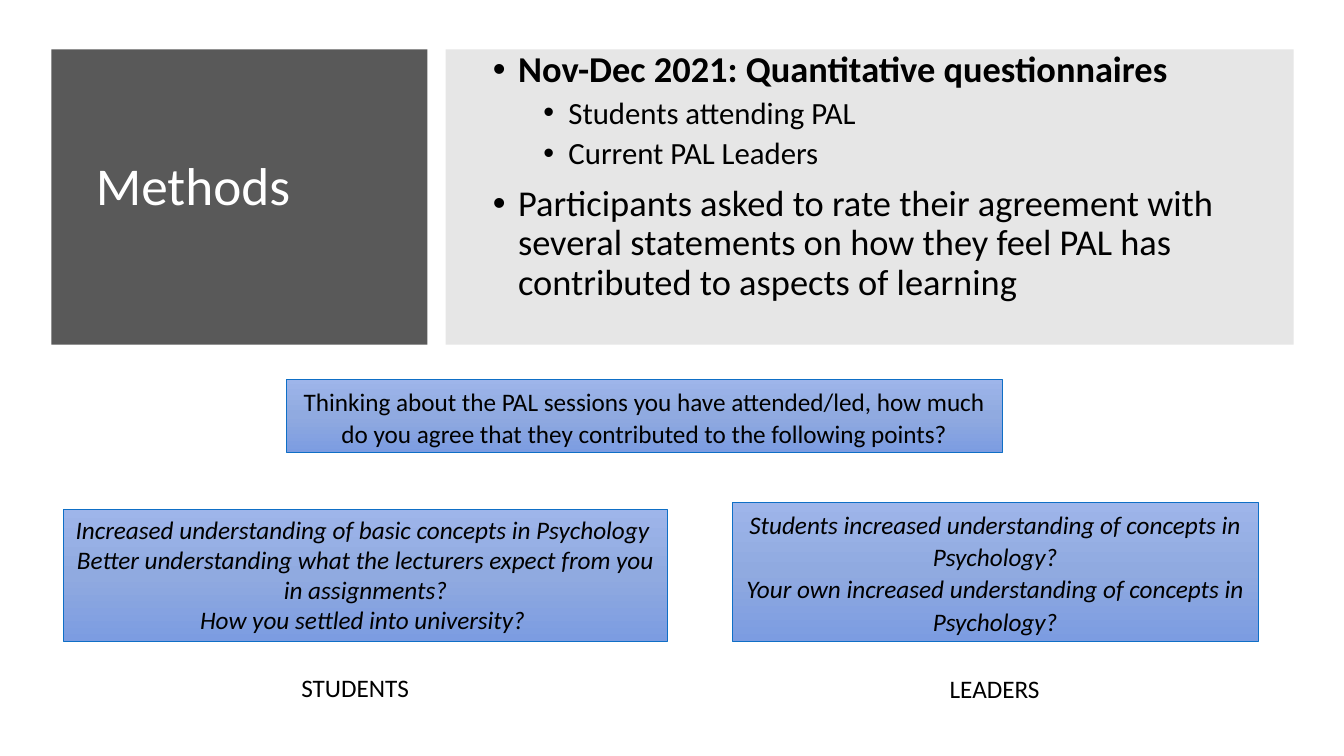
from dataclasses import dataclass
from pptx import Presentation, oxml, util as u
from pptx.dml.color import RGBColor
from pptx.enum import shapes, text
from pptx.oxml import ns


@dataclass(frozen=True)
class Theme:
    font: str = "Calibri"
    dark: str = "595959"
    pale: str = "E6E6E6"
    ink: str = "000000"
    white: str = "FFFFFF"
    edge: str = "0F6FC6"
    blend: tuple = ((0, "9EB5EA"), (50, "90AAE0"), (100, "7C9CE1"))
    head: int = 38
    main: int = 26
    sub: int = 22
    note: int = 18


class Deck:
    def __init__(self, theme):
        self.theme = theme
        self.prs = Presentation()
        self.prs.slide_width = u.Inches(13.33)
        self.prs.slide_height = u.Inches(7.5)
        self.slide = self.prs.slides.add_slide(self.prs.slide_layouts[5])

    def rect(self, *box):
        shape = self.slide.shapes.add_shape(
            shapes.MSO_SHAPE.RECTANGLE, *map(u.Inches, box))
        shape.shadow.inherit = False
        return shape

    def panel(self, box, color):
        shape = self.rect(*box)
        shape.fill.solid()
        shape.fill.fore_color.rgb = RGBColor.from_string(color)
        shape.line.fill.background()

    def run(self, para, words, size, color=None, bold=False, italic=False):
        run = para.add_run()
        run.text = words
        font = run.font
        font.name, font.size = self.theme.font, u.Pt(size)
        font.bold, font.italic = bold, italic
        font.color.rgb = RGBColor.from_string(color or self.theme.ink)

    def paras(self, frame, count):
        return [frame.paragraphs[0]] + [
            frame.add_paragraph() for _ in range(count - 1)]

    def title(self, box, words):
        shape = self.slide.shapes.title
        shape.left, shape.top, shape.width, shape.height = map(u.Inches, box)
        tree = shape._element.getparent()
        tree.append(shape._element)
        frame = shape.text_frame
        frame.word_wrap = True
        frame.vertical_anchor = text.MSO_ANCHOR.MIDDLE
        para = frame.paragraphs[0]
        para.alignment = text.PP_ALIGN.LEFT
        para.line_spacing = 0.9
        self.run(para, words, self.theme.head, self.theme.white)

    def bullets(self, box, items):
        frame = self.slide.shapes.add_textbox(
            *map(u.Inches, box)).text_frame
        frame.word_wrap = True
        for para, (level, words, bold) in zip(
                self.paras(frame, len(items)), items):
            para.level = level
            para.line_spacing = 0.9
            para.space_before = u.Pt(5 if level else 10)
            props = para._p.get_or_add_pPr()
            props.set("marL", str(u.Inches(0.25 + 0.5 * level)))
            props.set("indent", str(u.Inches(-0.25)))
            props.append(oxml.parse_xml(
                f'<a:buFont {ns.nsdecls("a")} typeface="Arial"/>'))
            props.append(oxml.parse_xml(
                f'<a:buChar {ns.nsdecls("a")} char="•"/>'))
            size = self.theme.sub if level else self.theme.main
            self.run(para, words, size, bold=bold)

    def card(self, box, lines, space=1.07, italic=True):
        shape = self.rect(*box)
        stops = "".join(
            f'<a:gs pos="{pos * 1000}"><a:srgbClr val="{color}"/></a:gs>'
            for pos, color in self.theme.blend)
        shape._element.spPr.insert(2, oxml.parse_xml(
            f'<a:gradFill {ns.nsdecls("a")} rotWithShape="1">'
            f'<a:gsLst>{stops}</a:gsLst>'
            '<a:lin ang="5400000" scaled="0"/></a:gradFill>'))
        shape.line.color.rgb = RGBColor.from_string(self.theme.edge)
        shape.line.width = u.Pt(0.5)
        frame = shape.text_frame
        frame.word_wrap = True
        frame.vertical_anchor = text.MSO_ANCHOR.TOP
        frame.auto_size = text.MSO_AUTO_SIZE.SHAPE_TO_FIT_TEXT
        for para, words in zip(self.paras(frame, len(lines)), lines):
            para.alignment = text.PP_ALIGN.CENTER
            para.line_spacing = space
            self.run(para, words, self.theme.note, italic=italic)

    def label(self, box, words):
        frame = self.slide.shapes.add_textbox(
            *map(u.Inches, box)).text_frame
        frame.word_wrap = True
        frame.auto_size = text.MSO_AUTO_SIZE.SHAPE_TO_FIT_TEXT
        para = frame.paragraphs[0]
        para.line_spacing = 1.07
        self.run(para, words, self.theme.note)


def main():
    theme = Theme()
    deck = Deck(theme)
    deck.panel((0.51, 0.49, 3.73, 2.93), theme.dark)
    deck.title((0.85, 0.47, 3.11, 2.8), "Methods")
    deck.panel((4.42, 0.49, 8.41, 2.93), theme.pale)
    deck.bullets((4.79, 0.46, 7.7, 2.9), [
        (0, "Nov-Dec 2021: Quantitative questionnaires", True),
        (1, "Students attending PAL", False),
        (1, "Current PAL Leaders", False),
        (0, "Participants asked to rate their agreement with several "
            "statements on how they feel PAL has contributed to aspects "
            "of learning", False),
    ])
    deck.card((0.63, 5.05, 5.99, 1.31), [
        "Increased understanding of basic concepts in Psychology ",
        "Better understanding what the lecturers expect from you "
        "in assignments?",
        "How you settled into university? ",
    ], space=1.0)
    deck.card((7.26, 4.98, 5.22, 1.38), [
        "Students increased understanding of concepts in Psychology?",
        "Your own increased understanding of concepts in Psychology?",
    ])
    deck.card((2.84, 3.76, 7.1, 0.73), [
        "Thinking about the PAL sessions you have attended/led, how much "
        "do you agree that they contributed to the following points?",
    ], italic=False)
    deck.label((2.89, 6.6, 1.46, 0.41), "STUDENTS")
    deck.label((9.32, 6.61, 1.11, 0.41), "LEADERS")
    deck.prs.save("out.pptx")


if __name__ == "__main__":
    main()
